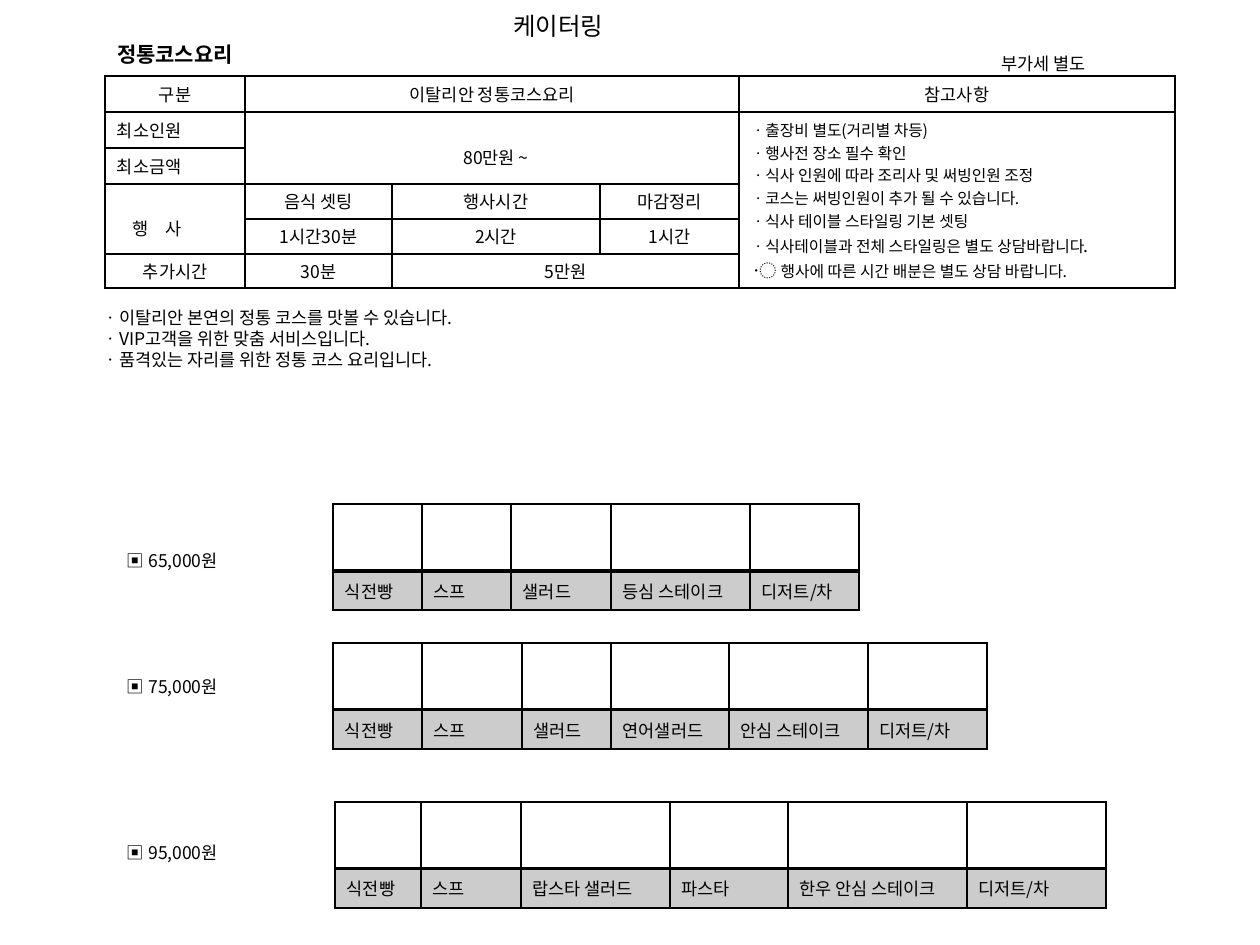
from dataclasses import dataclass

from lxml.etree import SubElement
from pptx import Presentation
from pptx.dml.color import RGBColor
from pptx.enum.text import MSO_ANCHOR, PP_ALIGN
from pptx.oxml.ns import qn
from pptx.util import Emu, Pt


@dataclass(frozen=True)
class Theme:
    """Hold the colours, font and type sizes of the slide."""
    ink: str = "000000"
    font: str = "Noto Sans CJK KR"
    title: int = 14
    head: int = 12
    body: int = 10
    note: int = 9
    shade: int = 20000


THEME = Theme()
MID, LEFT = PP_ALIGN.CENTER, PP_ALIGN.LEFT
SIDES = {"l": "a:lnL", "r": "a:lnR", "t": "a:lnT", "b": "a:lnB"}

NOTES = [
    "ㆍ출장비 별도(거리별 차등)",
    "ㆍ행사전 장소 필수 확인",
    "ㆍ식사 인원에 따라 조리사 및 써빙인원 조정",
    "ㆍ코스는 써빙인원이 추가 될 수 있습니다.",
    "ㆍ식사 테이블 스타일링 기본 셋팅",
    [("ㆍ식사테이블과 전체 스타일링은 별도 상담바랍니다", THEME.note), (".", THEME.body)],
    [(" 〮 ", THEME.body), ("행사에 따른 시간 배분은 별도 상담 바랍니다.", THEME.note)],
]
PERKS = [
    "ㆍ이탈리안 본연의 정통 코스를 맛볼 수 있습니다.",
    "ㆍVIP고객을 위한 맞춤 서비스입니다.",
    "ㆍ품격있는 자리를 위한 정통 코스 요리입니다.",
]
LABELS = [
    (105, 35, 160, 38, ["정통코스요리"], THEME.head, True),
    (989, 47, 120, 34, ["부가세 별도"], THEME.body, False),
    (115, 543, 120, 34, ["▣ 65,000원"], THEME.body, False),
    (115, 670, 120, 34, ["▣ 75,000원"], THEME.body, False),
    (115, 835, 120, 34, ["▣ 95,000원"], THEME.body, False),
]
MENUS = [
    (333, 504, {"식전빵": 89, "스프": 89, "샐러드": 100, "등심 스테이크": 139,
                "디저트/차": 109}),
    (333, 643, {"식전빵": 89, "스프": 100, "샐러드": 89, "연어샐러드": 118,
                "안심 스테이크": 139, "디저트/차": 119}),
    (335, 802, {"식전빵": 86, "스프": 100, "랍스타 샐러드": 149, "파스타": 118,
                "한우 안심 스테이크": 179, "디저트/차": 139}),
]
COLS = [140, 147, 208, 139, 436]
ROWS = [36, 36, 36, 35, 35, 34]
CELLS = [
    (0, 0, 1, 1, ["구분"], MID, {}),
    (0, 1, 1, 3, ["이탈리안 정통코스요리"], MID, {}),
    (0, 4, 1, 1, ["참고사항"], MID, {}),
    (1, 0, 1, 1, ["최소인원"], LEFT, {}),
    (1, 1, 2, 3, ["80만원 ~"], MID, {"margin_top": 22, "margin_left": 20}),
    (1, 4, 5, 1, NOTES, LEFT, {"vertical_anchor": MSO_ANCHOR.TOP, "margin_top": 6}),
    (2, 0, 1, 1, ["최소금액"], LEFT, {}),
    (3, 0, 2, 1, ["행　사"], LEFT, {"margin_top": 22, "margin_left": 27}),
    (3, 1, 1, 1, ["음식 셋팅"], MID, {}),
    (3, 2, 1, 1, ["행사시간"], MID, {}),
    (3, 3, 1, 1, ["마감정리"], MID, {}),
    (4, 1, 1, 1, ["1시간30분"], MID, {}),
    (4, 2, 1, 1, ["2시간"], MID, {}),
    (4, 3, 1, 1, ["1시간"], MID, {}),
    (5, 0, 1, 1, ["추가시간"], MID, {}),
    (5, 1, 1, 1, ["30분"], MID, {}),
    (5, 2, 1, 2, ["5만원"], MID, {}),
]


def px(num):
    """Turn px into EMU."""
    return Emu(round(num * 914400 / 126))


def style(item, **vals):
    """Set each given attribute on the item, with margins in px."""
    for key, val in vals.items():
        setattr(item, key, px(val) if key.startswith("margin") else val)


def write(frame, lines, size, bold=False, align=LEFT, pitch=None):
    """Fill a text frame with lines, each a string or a list of sized runs."""
    for pos, line in enumerate(lines):
        para = frame.add_paragraph() if pos else frame.paragraphs[0]
        style(para, alignment=align, line_spacing=pitch)
        for text, pts in [(line, size)] if isinstance(line, str) else line:
            run = para.add_run()
            run.text = text
            style(run.font, size=Pt(pts), bold=bold, name=THEME.font)
            run.font.color.rgb = RGBColor.from_string(THEME.ink)
            SubElement(run.font._element, qn("a:ea"), typeface=THEME.font)


def place(shape, left, top, wide, high):
    """Move a text shape and set up its frame."""
    style(shape, left=px(left), top=px(top), width=px(wide), height=px(high))
    frame = shape.text_frame
    style(frame, word_wrap=True, vertical_anchor=MSO_ANCHOR.MIDDLE,
          margin_left=12, margin_right=0, margin_top=0, margin_bottom=0)
    return frame


def label(slide, left, top, wide, high, lines, size, bold=False, pitch=None):
    """Add a text box."""
    box = slide.shapes.add_textbox(0, 0, 0, 0)
    write(place(box, left, top, wide, high), lines, size, bold, pitch=pitch)


def edge(cell, **wide):
    """Draw the four borders of a cell, one point wide unless given."""
    props = cell._tc.get_or_add_tcPr()
    for side, tag in SIDES.items():
        line = SubElement(props, qn(tag), w=str(Pt(wide.get(side, 1))))
        fill = SubElement(line, qn("a:solidFill"))
        SubElement(fill, qn("a:srgbClr"), val=THEME.ink)


def shade(cell):
    """Fill a cell with see-through ink."""
    cell.fill.solid()
    cell.fill.fore_color.rgb = RGBColor.from_string(THEME.ink)
    tint = cell._tc.tcPr.find(qn("a:solidFill")).find(qn("a:srgbClr"))
    SubElement(tint, qn("a:alpha"), val=str(THEME.shade))


def grid(slide, left, top, cols, rows):
    """Add a plain table without style bands."""
    table = slide.shapes.add_table(
        len(rows), len(cols), px(left), px(top), px(sum(cols)), px(sum(rows))).table
    style(table, first_row=False, horz_banding=False)
    for col, wide in zip(table.columns, cols):
        col.width = px(wide)
    for row, high in zip(table.rows, rows):
        row.height = px(high)
    for cell in table.iter_cells():
        style(cell, vertical_anchor=MSO_ANCHOR.MIDDLE, margin_left=12,
              margin_right=12, margin_top=4, margin_bottom=4)
    return table


def plan(slide):
    """Add the table of terms."""
    table = grid(slide, 105, 76, COLS, ROWS)
    for cell in table.iter_cells():
        edge(cell)
        cell.fill.background()
    for row, col, down, over, lines, align, vals in CELLS:
        cell = table.cell(row, col)
        if down * over > 1:
            cell.merge(table.cell(row + down - 1, col + over - 1))
        style(cell, **vals)
        size = THEME.note if lines is NOTES else THEME.body
        write(cell.text_frame, lines, size, align=align)


def menu(slide, left, top, items):
    """Add a course table with blank cells above the dish names."""
    table = grid(slide, left, top, list(items.values()), [67, 39])
    for col, name in enumerate(items):
        blank, dish = table.cell(0, col), table.cell(1, col)
        edge(blank, b=2)
        blank.fill.background()
        edge(dish, t=2)
        shade(dish)
        write(dish.text_frame, [name], THEME.body)


def main():
    """Build the catering slide."""
    deck = Presentation()
    style(deck, slide_width=px(1260), slide_height=px(945))
    slide = deck.slides.add_slide(deck.slide_layouts[5])
    write(place(slide.shapes.title, 501, 4, 125, 43), ["케이터링"], THEME.title)
    plan(slide)
    for item in LABELS:
        label(slide, *item)
    label(slide, 91, 300, 420, 77, PERKS, THEME.body, pitch=Pt(12))
    for item in MENUS:
        menu(slide, *item)
    deck.save("out.pptx")


if __name__ == "__main__":
    main()
